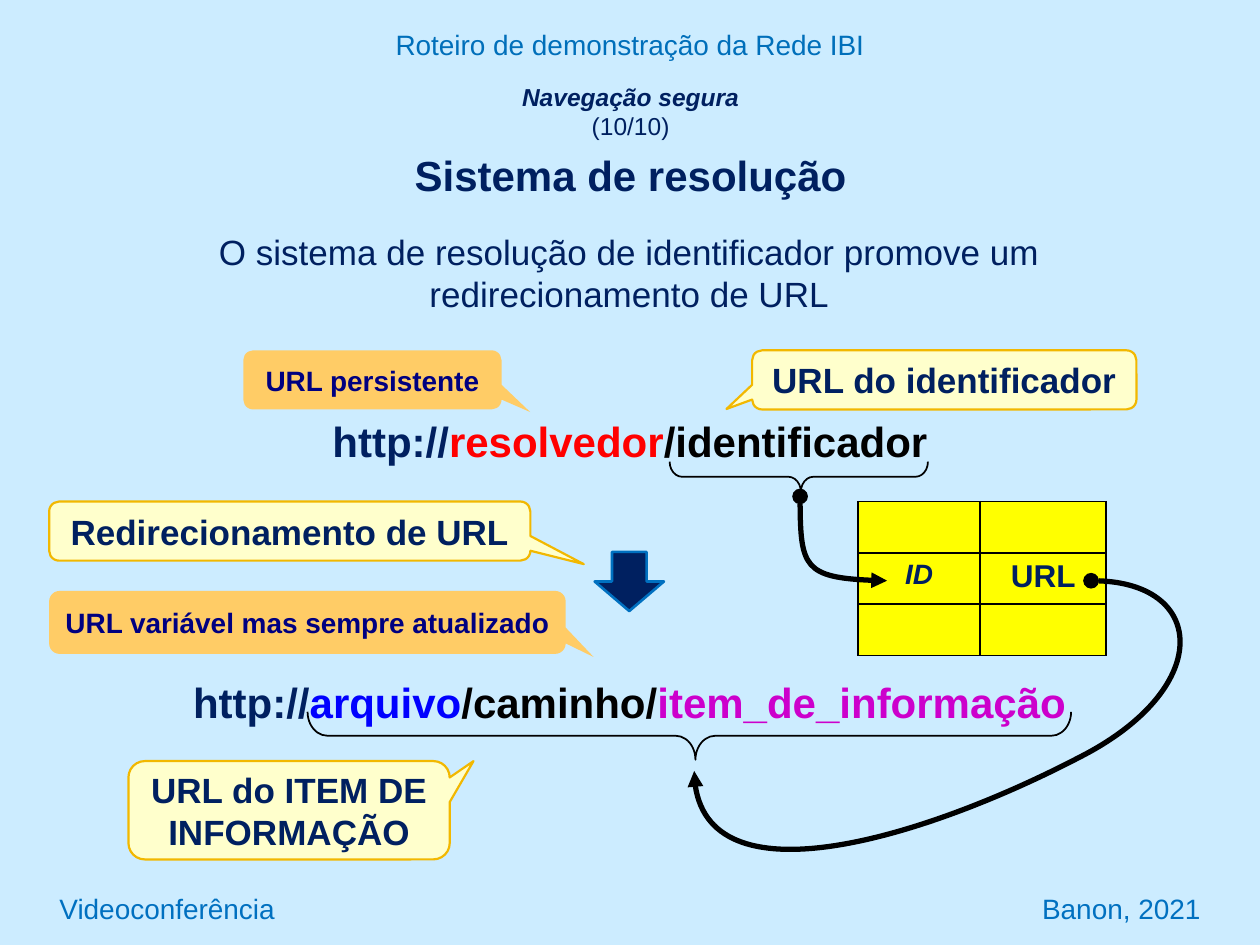
"""Builds the slide on how a resolution system redirects a URL."""
from lxml.etree import SubElement
from pptx import Presentation
from pptx.dml.color import RGBColor
from pptx.enum.shapes import MSO_SHAPE
from pptx.enum.text import MSO_ANCHOR, PP_ALIGN
from pptx.oxml.ns import qn
from pptx.util import Pt

HUES = {
    "sky": "CCECFF", "head": "006FBA", "blue": "0070C0", "navy": "002060",
    "dark": "000080", "black": "000000", "red": "FF0000", "pure": "0000FF",
    "pink": "CC00CC", "sand": "FFCC66", "cream": "FFFFCC", "gold": "F2B800",
    "yellow": "FFFF00",
}


def tint(name):
    return RGBColor.from_string(HUES[name])


class Deck:
    def __init__(self):
        self.show = Presentation()
        self.show.slide_width, self.show.slide_height = Pt(720), Pt(540)
        self.slide = self.show.slides.add_slide(self.show.slide_layouts[5])
        self.base = {"name": "Arial", "bold": False, "italic": False}
        self.slide.background.fill.solid()
        self.slide.background.fill.fore_color.rgb = tint("sky")

    def place(self, shape, box):
        for key, size in zip(("left", "top", "width", "height"), box):
            setattr(shape, key, Pt(size))

    def frame(self, frame, anchor=MSO_ANCHOR.TOP, side=7.2):
        form = {"word_wrap": True, "vertical_anchor": anchor,
                "margin_left": Pt(side), "margin_right": Pt(side),
                "margin_top": Pt(3.6), "margin_bottom": Pt(3.6)}
        for key, value in form.items():
            setattr(frame, key, value)

    def words(self, para, parts, size, align=PP_ALIGN.CENTER, **form):
        para.alignment = align
        for text, hue in parts:
            run = para.add_run()
            run.text = text
            run.font.color.rgb = tint(hue)
            for key, value in {**self.base, "size": Pt(size), **form}.items():
                setattr(run.font, key, value)

    def title(self, box):
        shape = self.slide.shapes.title
        self.place(shape, box)
        frame = shape.text_frame
        self.frame(frame)
        first, last = frame.paragraphs[0], frame.add_paragraph()
        self.words(first, [("Navegação segura", "navy")], 14, bold=True, italic=True)
        first.add_line_break()
        self.words(first, [("(10/10)", "navy")], 14)
        last.space_before = Pt(4.8)
        self.words(last, [("Sistema de resolução", "navy")], 24, bold=True)

    def text(self, box, parts, size, anchor=MSO_ANCHOR.TOP, side=7.2, **form):
        frame = self.slide.shapes.add_textbox(*map(Pt, box)).text_frame
        self.frame(frame, anchor, side)
        self.words(frame.paragraphs[0], parts, size, **form)

    def shape(self, kind, box, fill=None, line=None, width=1, tweaks=()):
        shape = self.slide.shapes.add_shape(kind, *map(Pt, box))
        self.paint(shape, fill, line, width)
        for spot, value in enumerate(tweaks):
            shape.adjustments[spot] = value
        return shape

    def paint(self, shape, fill, line, width):
        shape.shadow.inherit = False
        for part, hue in ((shape.fill, fill), (shape.line.fill, line)):
            if hue:
                part.solid()
                part.fore_color.rgb = tint(hue)
            else:
                part.background()
        if line:
            shape.line.width = Pt(width)

    def callout(self, box, tip, text, size, fill, hue, line=None):
        shape = self.shape(MSO_SHAPE.ROUNDED_RECTANGULAR_CALLOUT, box,
                           fill, line, 1.25, (*tip, 0.167))
        self.frame(shape.text_frame, MSO_ANCHOR.MIDDLE, 3.6)
        self.words(shape.text_frame.paragraphs[0], [(text, hue)], size, bold=True)

    def brace(self, box):
        shape = self.shape(MSO_SHAPE.LEFT_BRACE, box, line="black",
                           tweaks=(0.412, 0.492))
        shape.rotation = 270
        shape._element.spPr.xfrm.set("flipV", "1")

    def curve(self, points, width, height):
        spots = [(Pt(x), Pt(y)) for x, y in points]
        pen = self.slide.shapes.build_freeform(*spots[0])
        pen.add_line_segments(spots[1:], close=False)
        shape = pen.convert_to_shape()
        shape.width, shape.height = Pt(width), Pt(height)
        track = next(shape._element.iter(qn("a:path")))
        track.set("w", str(shape.width))
        track.set("h", str(shape.height))
        lines = track.findall(qn("a:lnTo"))
        for start in range(0, len(lines), 3):
            bend = SubElement(track, qn("a:cubicBezTo"))
            for step in lines[start:start + 3]:
                bend.append(step[0])
                track.remove(step)
        self.paint(shape, None, "black", 3)
        stroke = shape.line._get_or_add_ln()
        for end, kind in (("headEnd", "oval"), ("tailEnd", "triangle")):
            SubElement(stroke, qn(f"a:{end}"), type=kind)

    def table(self, box, cols, rows, labels):
        grid = self.slide.shapes.add_table(len(rows), len(cols), *map(Pt, box)).table
        grid.first_row = grid.horz_banding = False
        for parts, sizes, key in ((grid.columns, cols, "width"),
                                  (grid.rows, rows, "height")):
            for part, size in zip(parts, sizes):
                setattr(part, key, Pt(size))
        for cell in grid.iter_cells():
            props = cell._tc.get_or_add_tcPr()
            for side in ("lnL", "lnR", "lnT", "lnB"):
                edge = SubElement(props, qn(f"a:{side}"), w=str(Pt(1)))
                fill = SubElement(edge, qn("a:solidFill"))
                SubElement(fill, qn("a:srgbClr"), val=HUES["black"])
            cell.fill.solid()
            cell.fill.fore_color.rgb = tint("yellow")
        for (row, col), (text, size, slant) in labels.items():
            para = grid.cell(row, col).text_frame.paragraphs[0]
            self.words(para, [(text, "navy")], size, bold=True, italic=slant)


def main():
    deck = Deck()
    deck.title((54, 43.2, 612.7, 70.6))
    deck.text((0, 12.2, 720, 26.6), [("Roteiro de demonstração da Rede IBI", "head")], 16)
    for left, word, align in ((0, "Videoconferência", PP_ALIGN.LEFT),
                              (360, "Banon, 2021", PP_ALIGN.RIGHT)):
        deck.text((left, 504, 360, 30.2), [(word, "blue")], 16,
                  MSO_ANCHOR.MIDDLE, 34, align=align)
    deck.text((66.2, 128.2, 586.8, 55.4),
              [("O sistema de resolução de identificador promove um "
                "redirecionamento de URL", "navy")], 20)
    deck.text((99.4, 383, 520.6, 36),
              [("http://", "navy"), ("arquivo", "pure"), ("/caminho/", "black"),
               ("item_de_informação", "pink")], 24, bold=True)
    deck.text((180, 234, 360, 36),
              [("http://", "navy"), ("resolvedor", "red"),
               ("/identificador", "black")], 24, bold=True)

    for box, tip, text in (
        ((139, 200.2, 147.6, 33.8), (0.611, 0.544), "URL persistente"),
        ((28.1, 337.7, 295.2, 36), (0.554, 0.549), "URL variável mas sempre atualizado"),
    ):
        deck.callout(box, tip, text, 16, "sand", "dark")

    deck.shape(MSO_SHAPE.DOWN_ARROW, (339.8, 315.4, 39.6, 33.8), "navy", "blue", 1.5)
    deck.table((490.3, 286.6, 141.8, 87.9), (69.8, 72), (29.3,) * 3,
               {(1, 0): ("ID", 16, True), (1, 1): ("URL", 18, False)})
    deck.curve([(457.2, 283.7), (457.2, 323.3), (460.1, 331.2), (506.9, 331.9)],
               49.7, 48.2)
    deck.curve([(623.5, 331.9), (689.8, 331.2), (693.4, 393.8), (617, 432.7),
                (531.4, 477.4), (397.4, 519.8), (396.7, 440.6)], 276.5, 153.4)
    deck.brace((380.2, 202.3, 27.4, 436.3))
    deck.brace((447.8, 198.7, 17.3, 147.6))

    for box, tip, text in (
        ((28.1, 286.6, 275, 33.8), (0.611, 0.559), "Redirecionamento de URL"),
        ((429.8, 200.2, 219.6, 33.8), (-0.567, 0.493), "URL do identificador"),
        ((73.4, 434.9, 183.6, 56.2), (0.574, -0.499), "URL do ITEM DE INFORMAÇÃO"),
    ):
        deck.callout(box, tip, text, 20, "cream", "navy", "gold")
    deck.show.save("out.pptx")


if __name__ == "__main__":
    main()
